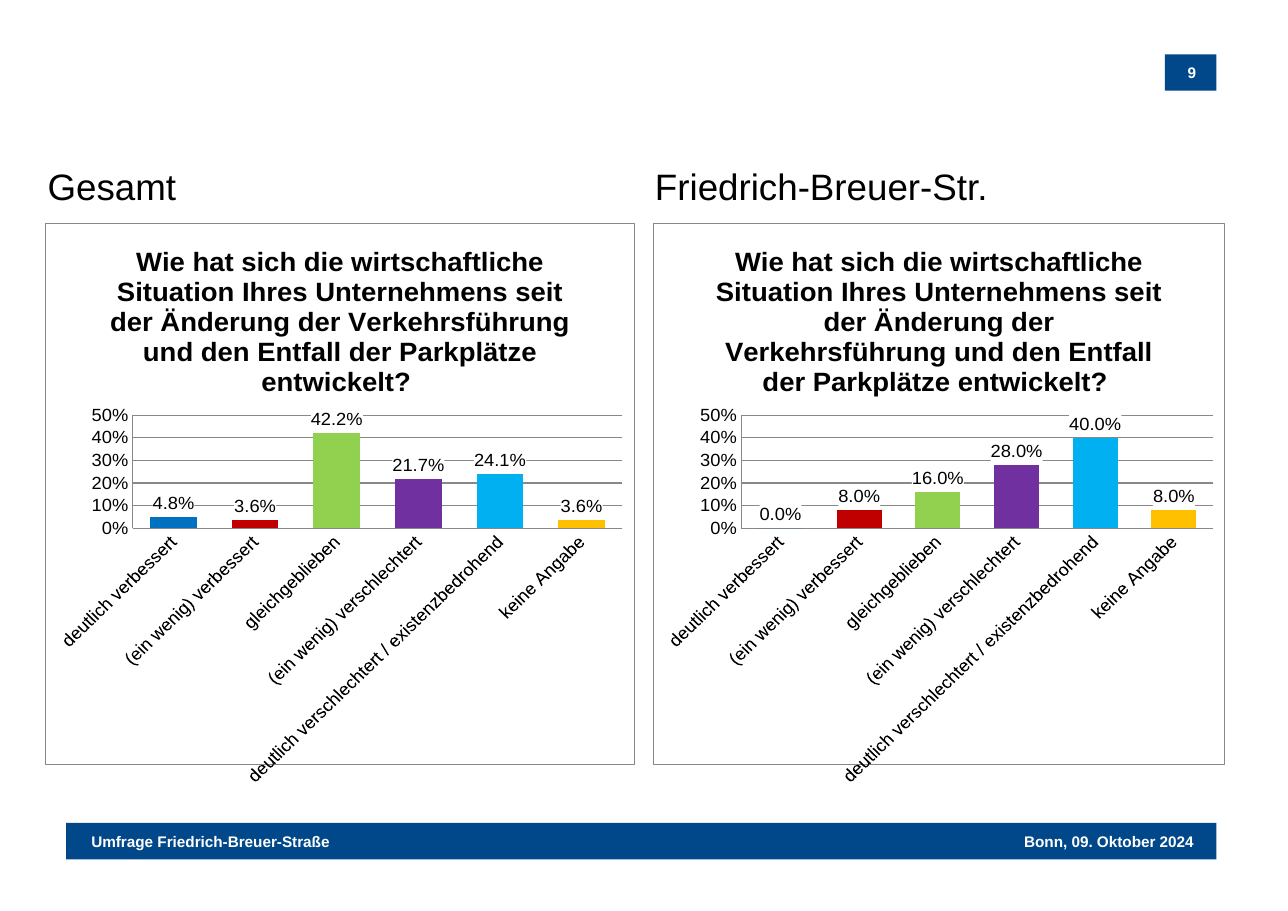
from dataclasses import dataclass

from pptx import Presentation
from pptx.chart.data import CategoryChartData
from pptx.dml.color import RGBColor
from pptx.enum.chart import XL_CHART_TYPE as ChartType
from pptx.enum.chart import XL_LABEL_POSITION as LabelPosition
from pptx.enum.chart import XL_TICK_MARK as TickMark
from pptx.enum.shapes import MSO_SHAPE as Preset
from pptx.enum.text import MSO_ANCHOR as Anchor
from pptx.enum.text import MSO_AUTO_SIZE as AutoSize
from pptx.enum.text import PP_ALIGN as Align
from pptx.oxml import parse_xml
from pptx.oxml.ns import nsdecls, qn
from pptx.util import Pt


@dataclass(frozen=True)
class Theme:
    font: str = "Arial"
    blue: str = "01488A"
    white: str = "FFFFFF"
    black: str = "000000"
    grey: str = "888888"
    bars: tuple = ("0070C0", "C00000", "92D050", "7030A0", "00B0F0", "FFC000")
    heading: int = 24
    chart_title: int = 18
    axis: int = 12
    footer: int = 10
    line: float = 0.75


THEME = Theme()
QUESTION = ("Wie hat sich die wirtschaftliche Situation Ihres Unternehmens seit "
            "der Änderung der Verkehrsführung und den Entfall der Parkplätze entwickelt? ")
ANSWERS = ("deutlich verbessert", "(ein wenig) verbessert", "gleichgeblieben",
           "(ein wenig) verschlechtert", "deutlich verschlechtert / existenzbedrohend",
           "keine Angabe")
PANELS = (
    ("Gesamt", 1, (29.6, 145.6, 385.2, 367.9),
     (0.048, 0.036, 0.422, 0.217, 0.241, 0.036)),
    ("Friedrich-Breuer-Str.", 3, (426.5, 145.6, 374.2, 367.9),
     (0, 0.08, 0.16, 0.28, 0.4, 0.08)),
)


def place(shape, left, top, width, height):
    shape.left, shape.top = Pt(left), Pt(top)
    shape.width, shape.height = Pt(width), Pt(height)


def style_font(font, size, color=THEME.black, bold=False):
    font.name, font.size, font.bold = THEME.font, Pt(size), bold
    font.color.rgb = RGBColor.from_string(color)


def write_text(frame, text, size, color=THEME.black, bold=False,
               align=Align.LEFT, anchor=Anchor.TOP, wrap=True):
    frame.word_wrap = wrap
    frame.auto_size = AutoSize.NONE
    frame.vertical_anchor = anchor
    paragraph = frame.paragraphs[0]
    paragraph.alignment = align
    paragraph.space_before = Pt(0)
    run = paragraph.add_run()
    run.text = text
    style_font(run.font, size, color, bold)


def add_band(slide, box):
    band = slide.shapes.add_shape(Preset.RECTANGLE, *map(Pt, box))
    band.shadow.inherit = False
    band.fill.solid()
    band.fill.fore_color.rgb = RGBColor.from_string(THEME.blue)
    band.line.fill.background()


def add_band_text(slide, text, box, align):
    text_box = slide.shapes.add_textbox(*map(Pt, box))
    write_text(text_box.text_frame, text, THEME.footer, THEME.white, True, align)


def add_page_number(slide, box):
    left, top, width, height = box
    add_band(slide, box)
    add_band_text(slide, "9", (left - 0.7, top + 2.5, width + 2.9, 19.4), Align.CENTER)


def add_footer(slide, box):
    left, top, width, height = box
    half = width / 2
    add_band(slide, box)
    add_band_text(slide, "Umfrage Friedrich-Breuer-Straße",
                  (left + 9.4, top + 2.4, half - 9.4, 19.4), Align.LEFT)
    add_band_text(slide, "Bonn, 09. Oktober 2024",
                  (left + half, top + 2.4, half - 7.9, 19.4), Align.RIGHT)


def area_format(border=None):
    line = "<a:ln><a:noFill/></a:ln>"
    if border:
        line = (f'<a:ln w="{Pt(THEME.line)}"><a:solidFill><a:srgbClr val="{border}"/>'
                "</a:solidFill></a:ln>")
    return parse_xml(f'<c:spPr {nsdecls("c", "a")}><a:solidFill>'
                     f'<a:srgbClr val="{THEME.white}"/></a:solidFill>{line}</c:spPr>')


def style_line(line):
    line.color.rgb = RGBColor.from_string(THEME.grey)
    line.width = Pt(THEME.line)


def style_axes(chart):
    for axis in (chart.category_axis, chart.value_axis):
        axis.major_tick_mark = axis.minor_tick_mark = TickMark.NONE
        style_font(axis.tick_labels.font, THEME.axis)
        style_line(axis.format.line)
    value_axis = chart.value_axis
    value_axis.minimum_scale, value_axis.maximum_scale = 0, 0.5
    value_axis.major_unit = 0.1
    value_axis.has_major_gridlines = True
    style_line(value_axis.major_gridlines.format.line)
    value_axis.tick_labels.number_format = "0%"
    value_axis.tick_labels.number_format_is_linked = False
    body = chart.category_axis._element.find(qn("c:txPr")).find(qn("a:bodyPr"))
    body.set("rot", "-2700000")
    body.set("vert", "horz")


def style_bars(plot):
    plot.gap_width = 75
    plot.vary_by_categories = False
    for index, color in enumerate(THEME.bars):
        fill = plot.series[0].points[index].format.fill
        fill.solid()
        fill.fore_color.rgb = RGBColor.from_string(color)
    plot.has_data_labels = True
    labels = plot.data_labels
    labels.show_value = True
    labels.position = LabelPosition.OUTSIDE_END
    labels.number_format = "0.0%"
    labels.number_format_is_linked = False
    style_font(labels.font, THEME.axis)
    labels._element.find(qn("c:numFmt")).addnext(area_format())


def add_panel(slide, heading, placeholder_index, box, values):
    left, top, width, height = box
    placeholder = slide.placeholders[placeholder_index]
    place(placeholder, left - 5.7, top - 42.4, 254.9, 36)
    write_text(placeholder.text_frame, heading, THEME.heading)

    data = CategoryChartData()
    data.categories = ANSWERS
    data.add_series("Series 1", values)
    chart = slide.shapes.add_chart(ChartType.COLUMN_CLUSTERED, *map(Pt, box), data).chart
    style_font(chart.font, THEME.footer)
    chart.has_legend = False
    chart.has_title = True
    write_text(chart.chart_title.text_frame, QUESTION, THEME.chart_title,
               bold=True, align=Align.CENTER)
    chart.chart_title.include_in_layout = False
    style_axes(chart)
    style_bars(chart.plots[0])
    chart_element = chart._chartSpace.find(qn("c:chart"))
    chart_element.addnext(area_format(THEME.grey))
    chart_element.find(qn("c:plotArea")).append(area_format())


def build_comparison(presentation):
    slide = presentation.slides.add_slide(presentation.slide_layouts[4])
    add_page_number(slide, (761.2, 35.5, 33.8, 23.8))
    add_footer(slide, (43.2, 537.9, 751.8, 23.8))
    for panel in PANELS:
        add_panel(slide, *panel)
    for placeholder in list(slide.placeholders):
        if not placeholder.text_frame.text:
            placeholder._element.getparent().remove(placeholder._element)


def main():
    presentation = Presentation()
    presentation.slide_width, presentation.slide_height = Pt(841.7), Pt(595.4)
    build_comparison(presentation)
    presentation.save("out.pptx")


if __name__ == "__main__":
    main()
